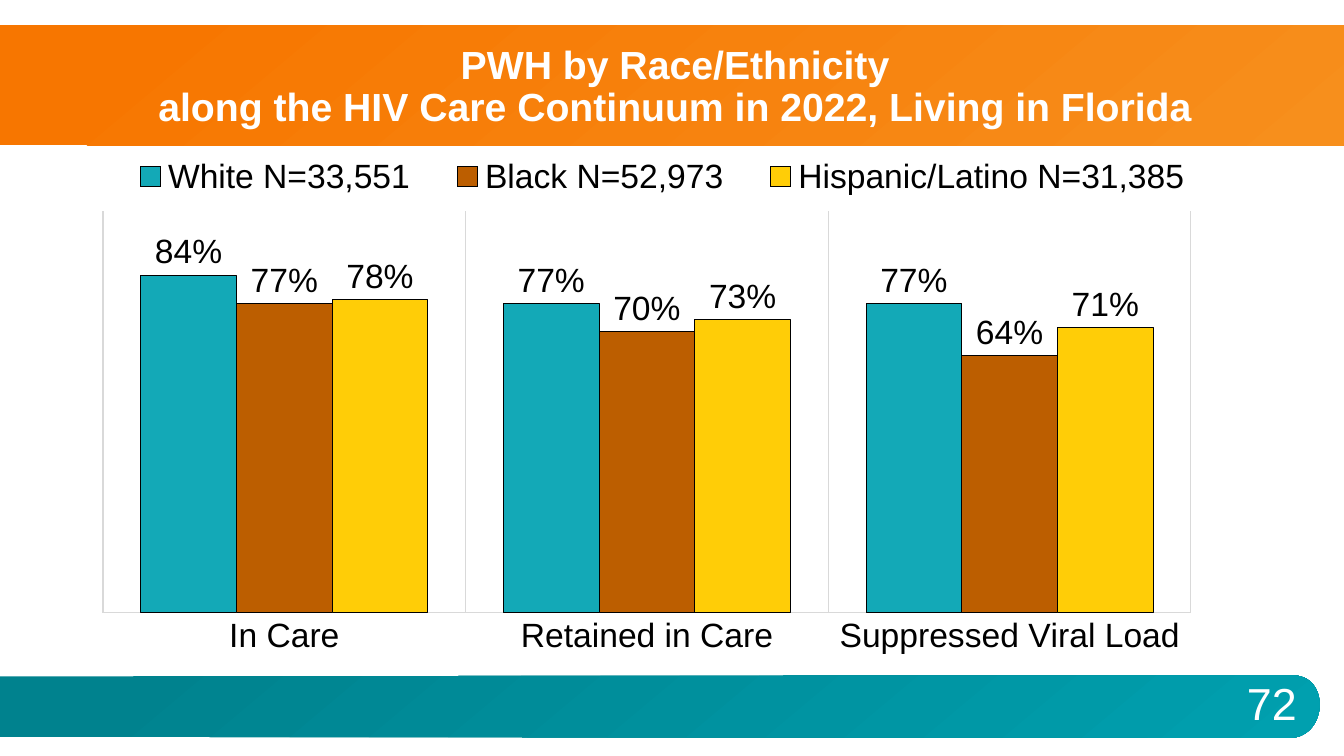
from lxml import etree
from pptx import Presentation
from pptx.chart.data import CategoryChartData
from pptx.dml.color import RGBColor
from pptx.enum.chart import XL_CHART_TYPE, XL_LABEL_POSITION, XL_LEGEND_POSITION, XL_TICK_MARK
from pptx.enum.shapes import MSO_SHAPE
from pptx.enum.text import MSO_ANCHOR, PP_ALIGN
from pptx.oxml.ns import qn
from pptx.util import Inches, Pt

COLUMNS = XL_CHART_TYPE.COLUMN_CLUSTERED
OUTSIDE_END = XL_LABEL_POSITION.OUTSIDE_END
LEGEND_TOP = XL_LEGEND_POSITION.TOP
NO_TICK = XL_TICK_MARK.NONE
RECTANGLE = MSO_SHAPE.RECTANGLE
MIDDLE = MSO_ANCHOR.MIDDLE
CENTER = PP_ALIGN.CENTER

# Content
TITLE = "PWH by Race/Ethnicity\valong the HIV Care Continuum in 2022, Living in Florida"
PAGE_NUMBER = "72"
CATEGORIES = ["In Care", "Retained in Care", "Suppressed Viral Load"]
SERIES = [
    ("White N=33,551", (0.84, 0.77, 0.77), "white"),
    ("Black N=52,973", (0.77, 0.70, 0.64), "black"),
    ("Hispanic/Latino N=31,385", (0.78, 0.73, 0.71), "hispanic"),
]

# Style
FONT = "Arial"
COLORS = {
    "white": "13A9B7", "black": "BC5E00", "hispanic": "FFCD07",
    "text": "000000", "reverse": "FFFFFF", "grid": "D9D9D9",
    "orange_dark": "F77600", "orange_light": "F78F1C",
    "teal_dark": "00828E", "teal_light": "00A0AF",
}
# Chart parts as fractions of the chart
PLOT_LAYOUT = {"x": 0.009, "y": 0.125, "w": 0.955, "h": 0.762}
LEGEND_LAYOUT = {"x": 0.01, "y": 0.01, "w": 0.98, "h": 0.1}
FOOTER_CURVE = [(12.8, 6.7), (13.2, 6.68), (13.17, 7.31), (12.8, 7.32)]
CURVE_STEPS = 32


def color(name):
    return RGBColor.from_string(COLORS[name])


def format_font(font, size, color_name, bold=False):
    for name, value in {"name": FONT, "size": Pt(size), "bold": bold}.items():
        setattr(font, name, value)
    font.color.rgb = color(color_name)


def format_line(line, color_name):
    line.color.rgb = color(color_name)
    line.width = Pt(0.75)


def format_band(shape, start, end):
    shape.shadow.inherit = False
    shape.line.fill.background()
    shape.fill.gradient()
    shape.fill.gradient_angle = 310
    for stop, name, position in zip(shape.fill.gradient_stops, (start, end), (0.09, 1)):
        stop.color.rgb = color(name)
        stop.position = position


def fill_text(shape, text, size, bold=False, line_spacing=None):
    frame = shape.text_frame
    frame.word_wrap = True
    frame.vertical_anchor = MIDDLE
    frame.text = text
    paragraph = frame.paragraphs[0]
    paragraph.alignment = CENTER
    paragraph.line_spacing = line_spacing
    for run in paragraph.runs:
        format_font(run.font, size, "reverse", bold)


def curve_point(t):
    weights = ((1 - t) ** 3, 3 * t * (1 - t) ** 2, 3 * t ** 2 * (1 - t), t ** 3)
    return tuple(Inches(sum(w * point[axis] for w, point in zip(weights, FOOTER_CURVE)))
                 for axis in (0, 1))


def add_footer(slide):
    points = [curve_point(step / CURVE_STEPS) for step in range(CURVE_STEPS + 1)]
    points += [(0, Inches(7.31)), (0, Inches(6.71))]
    builder = slide.shapes.build_freeform(*points[0])
    builder.add_line_segments(points[1:], close=True)
    format_band(builder.convert_to_shape(), "teal_dark", "teal_light")


def set_layout(parent, index, settings):
    for old_layout in parent.findall(qn("c:layout")):
        parent.remove(old_layout)
    layout = etree.Element(qn("c:layout"))
    parent.insert(index, layout)
    manual = etree.SubElement(layout, qn("c:manualLayout"))
    for tag, value in settings.items():
        etree.SubElement(manual, qn(f"c:{tag}"), val=str(value))


def add_chart(slide):
    data = CategoryChartData(number_format="0%")
    data.categories = CATEGORIES
    for name, values, _ in SERIES:
        data.add_series(name, values)
    chart = slide.shapes.add_chart(
        COLUMNS, Inches(0.92), Inches(1.44), Inches(11.3), Inches(5.23), data).chart
    format_font(chart.font, 24, "text")
    chart.has_title = False

    # Legend
    chart.has_legend = True
    chart.legend.position = LEGEND_TOP
    chart.legend.include_in_layout = False
    format_font(chart.legend.font, 24, "text")

    # Axes
    category_axis = chart.category_axis
    category_axis.major_tick_mark = NO_TICK
    category_axis.has_major_gridlines = True
    format_line(category_axis.format.line, "grid")
    format_line(category_axis.major_gridlines.format.line, "grid")
    value_axis = chart.value_axis
    value_axis.minimum_scale = 0
    value_axis.maximum_scale = 1
    value_axis.has_major_gridlines = False
    value_axis.format.line.fill.background()
    value_axis.visible = False

    # Columns and labels
    plot = chart.plots[0]
    plot.gap_width = 79
    plot.overlap = 0
    plot.vary_by_categories = False
    for series, (_, _, color_name) in zip(plot.series, SERIES):
        series.format.fill.solid()
        series.format.fill.fore_color.rgb = color(color_name)
        format_line(series.format.line, "text")
        labels = series.data_labels
        labels.show_value = True
        labels.position = OUTSIDE_END
        labels.number_format = "0%"
        labels.number_format_is_linked = False
        format_font(labels.font, 24, "text")

    # One-row legend above a fixed inner plot area
    edges = {"xMode": "edge", "yMode": "edge"}
    set_layout(chart.legend._element, 1, {**edges, **LEGEND_LAYOUT})
    set_layout(plot._element.getparent(), 0, {"layoutTarget": "inner", **edges, **PLOT_LAYOUT})


def main():
    presentation = Presentation()
    presentation.slide_width = Inches(13.33)
    presentation.slide_height = Inches(7.5)
    slide = presentation.slides.add_slide(presentation.slide_layouts[5])

    # Bands and page number
    add_footer(slide)
    banner = slide.shapes.add_shape(RECTANGLE, 0, Inches(0.25), Inches(13.33), Inches(1.19))
    format_band(banner, "orange_dark", "orange_light")
    number = slide.shapes.add_textbox(Inches(12.07), Inches(6.68), Inches(1.09), Inches(0.59))
    fill_text(number, PAGE_NUMBER, 32)

    add_chart(slide)

    # Title, in front of the banner
    title = slide.shapes.title
    title.left, title.top = Inches(0.74), Inches(0.28)
    title.width, title.height = Inches(11.91), Inches(1.18)
    fill_text(title, TITLE, 28, bold=True, line_spacing=0.9)
    title.element.getparent().append(title.element)

    presentation.save("out.pptx")


if __name__ == "__main__":
    main()
